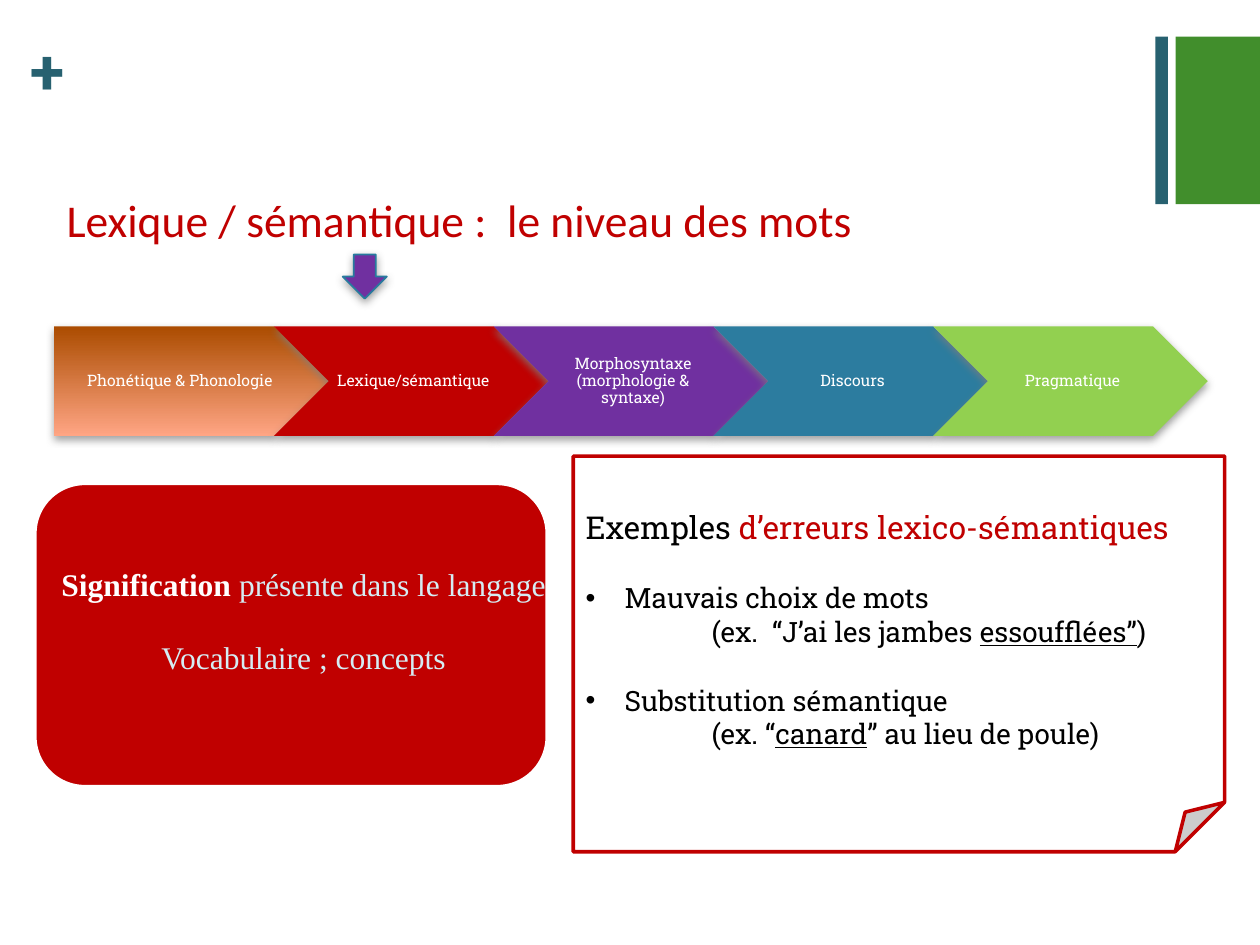
from lxml import etree
from pptx import Presentation
from pptx.dml.color import RGBColor
from pptx.enum.shapes import MSO_SHAPE
from pptx.enum.text import MSO_ANCHOR, PP_ALIGN
from pptx.oxml.ns import qn
from pptx.util import Inches, Pt

RECT, ROUND, FOLD = MSO_SHAPE.RECTANGLE, MSO_SHAPE.ROUNDED_RECTANGLE, MSO_SHAPE.FOLDED_CORNER
DOWN, PLATE, CHEVRON = MSO_SHAPE.DOWN_ARROW, MSO_SHAPE.PENTAGON, MSO_SHAPE.CHEVRON
MIDDLE, TOP = MSO_ANCHOR.MIDDLE, MSO_ANCHOR.TOP
LEFT, CENTER = PP_ALIGN.LEFT, PP_ALIGN.CENTER

COLORS = {
    "white": "FFFFFF", "black": "000000", "red": "C00000", "green": "418E2C",
    "teal": "276170", "pale": "D5EDF4", "purple": "7030A0", "edge": "287A9E",
    "blue": "2C7C9F", "lime": "92D050", "rust": "AB4C00", "peach": "FFA584",
    "shade": "808080",
}
SLAB, SERIF, SANS = "Roboto Slab", "Times New Roman", "Calibri"

# A paragraph is (runs, paragraph format, bullet); a run is (text, font format).
TITLE = [([("Lexique / sémantique :  le niveau des mots",
            {"name": SANS, "size": Pt(26), "color": "red"})],
          {"line_spacing": Pt(30)}, None)]
PLUS = [([("+", {"name": SLAB, "size": Pt(36), "color": "teal", "bold": True})], {}, None)]

STEPS = [
    ("Phonétique & Phonologie", ("rust", "peach")),
    ("Lexique/sémantique", "red"),
    ("Morphosyntaxe (morphologie & syntaxe)", "purple"),
    ("Discours", "blue"),
    ("Pragmatique", "lime"),
]
STEP_FONT = {"name": SLAB, "size": Pt(9), "color": "white"}

STRONG = {"name": SERIF, "size": Pt(18), "color": "white", "bold": True}
PLAIN = {"name": SERIF, "size": Pt(18), "color": "pale"}
MEANING = [
    ([("Signification ", STRONG), ("présente dans le langage", PLAIN)],
     {"alignment": CENTER}, None),
    ([("Vocabulaire ; concepts", PLAIN)],
     {"alignment": CENTER, "space_before": Pt(20)}, None),
]

HEAD = {"name": SLAB, "size": Pt(18), "color": "black"}
BODY = {"name": SLAB, "size": Pt(16), "color": "black"}
UNDER = {**BODY, "underline": True}
ITEM = {"space_before": Pt(20)}
BULLET, DETAIL = (0.31, -0.31, "•"), (1, 0, None)
ERRORS = [
    ([("Exemples ", HEAD), ("d’erreurs lexico-sémantiques", {**HEAD, "color": "red"})], {}, None),
    ([("Mauvais choix de mots", BODY)], ITEM, BULLET),
    ([("(ex.  “J’ai les jambes ", BODY), ("essoufflées”", UNDER), (")", BODY)], {}, DETAIL),
    ([("Substitution sémantique", BODY)], ITEM, BULLET),
    ([("(ex. “", BODY), ("canard", UNDER), ("” au lieu de poule)", BODY)], {}, DETAIL),
]


def rgb(name):
    return RGBColor.from_string(COLORS[name])


def indent(para, left, first, mark):
    props = para._p.get_or_add_pPr()
    props.set("marL", str(Inches(left)))
    props.set("indent", str(Inches(first)))
    if mark:
        etree.SubElement(props, qn("a:buFont")).set("typeface", "Arial")
        etree.SubElement(props, qn("a:buChar")).set("char", mark)


def write(shape, paras, insets=(0.1, 0.05, 0.1, 0.05), anchor=MIDDLE, wrap=True):
    frame = shape.text_frame
    frame.word_wrap, frame.vertical_anchor = wrap, anchor
    for side, gap in zip(("left", "top", "right", "bottom"), insets):
        setattr(frame, f"margin_{side}", Inches(gap))
    for i, (runs, form, marker) in enumerate(paras):
        para = frame.add_paragraph() if i else frame.paragraphs[0]
        for key, value in {"alignment": LEFT, **form}.items():
            setattr(para, key, value)
        if marker:
            indent(para, *marker)
        for text, font in runs:
            run = para.add_run()
            run.text = text
            for key, value in font.items():
                if key == "color":
                    run.font.color.rgb = rgb(value)
                else:
                    setattr(run.font, key, value)


def shadow(shape):
    effects = shape._element.spPr.find(qn("a:effectLst"))
    outer = etree.SubElement(effects, qn("a:outerShdw"), blurRad=str(Pt(5)),
                             dist=str(Pt(2)), dir="5400000", rotWithShape="0")
    color = etree.SubElement(outer, qn("a:srgbClr"), val=COLORS["shade"])
    etree.SubElement(color, qn("a:alpha"), val="75000")


def fold(shape, share):
    """Set the size of the folded corner, which has no public adjustment."""
    guides = shape._element.spPr.find(qn("a:prstGeom")).get_or_add_avLst()
    etree.SubElement(guides, qn("a:gd"), name="adj", fmla=f"val {round(share * 100000)}")


def draw(slide, kind, box, fill, line=None, cast=False):
    """Add a shape; fill is a colour name, or a pair for a downward gradient."""
    shape = slide.shapes.add_shape(kind, *map(Inches, box))
    shape.shadow.inherit = False
    if isinstance(fill, tuple):
        shape.fill.gradient()
        shape.fill.gradient_angle = 270
        for stop, name, place in zip(shape.fill.gradient_stops, fill, (0, 1)):
            stop.color.rgb, stop.position = rgb(name), place
    else:
        shape.fill.solid()
        shape.fill.fore_color.rgb = rgb(fill)
    if line:
        shape.line.color.rgb, shape.line.width = rgb(line[0]), Pt(line[1])
    else:
        shape.line.fill.background()
    if cast:
        shadow(shape)
    return shape


def label(slide, box, paras, insets):
    write(slide.shapes.add_textbox(*map(Inches, box)), paras, insets, TOP)


def main():
    deck = Presentation()
    deck.slide_width, deck.slide_height = Inches(10), Inches(7.5)
    slide = deck.slides.add_slide(deck.slide_layouts[6])

    draw(slide, RECT, (9.33, 0.29, 0.67, 1.33), "green")
    draw(slide, RECT, (9.17, 0.29, 0.1, 1.33), "teal")
    label(slide, (0.24, 0.25, 0.29, 0.61), PLUS, (0, 0, 0, 0))
    label(slide, (0.43, 1.49, 9, 0.52), TITLE, (0.1, 0.05, 0.1, 0.05))

    meaning = draw(slide, ROUND, (0.27, 3.83, 4.08, 2.42), "red", ("white", 3))
    write(meaning, MEANING, (0.3, 0.05, 0.1, 0.28), wrap=False)
    errors = draw(slide, FOLD, (4.55, 3.62, 5.17, 3.14), "white", ("red", 2))
    fold(errors, 0.125)
    write(errors, ERRORS)

    draw(slide, DOWN, (2.72, 2.02, 0.35, 0.35), "purple", ("edge", 1), True)
    width, height = 2.18, 0.87
    pitch = width * 0.8
    for i, (text, fill) in enumerate(STEPS):
        kind = CHEVRON if i else PLATE
        step = draw(slide, kind, (0.43 + i * pitch, 2.59, width, height), fill, cast=True)
        form = {"alignment": CENTER, "line_spacing": 0.9}
        write(step, [([(text, STEP_FONT)], form, None)], (0.04, 0.03, 0.01, 0.03))

    deck.save("out.pptx")


if __name__ == "__main__":
    main()
